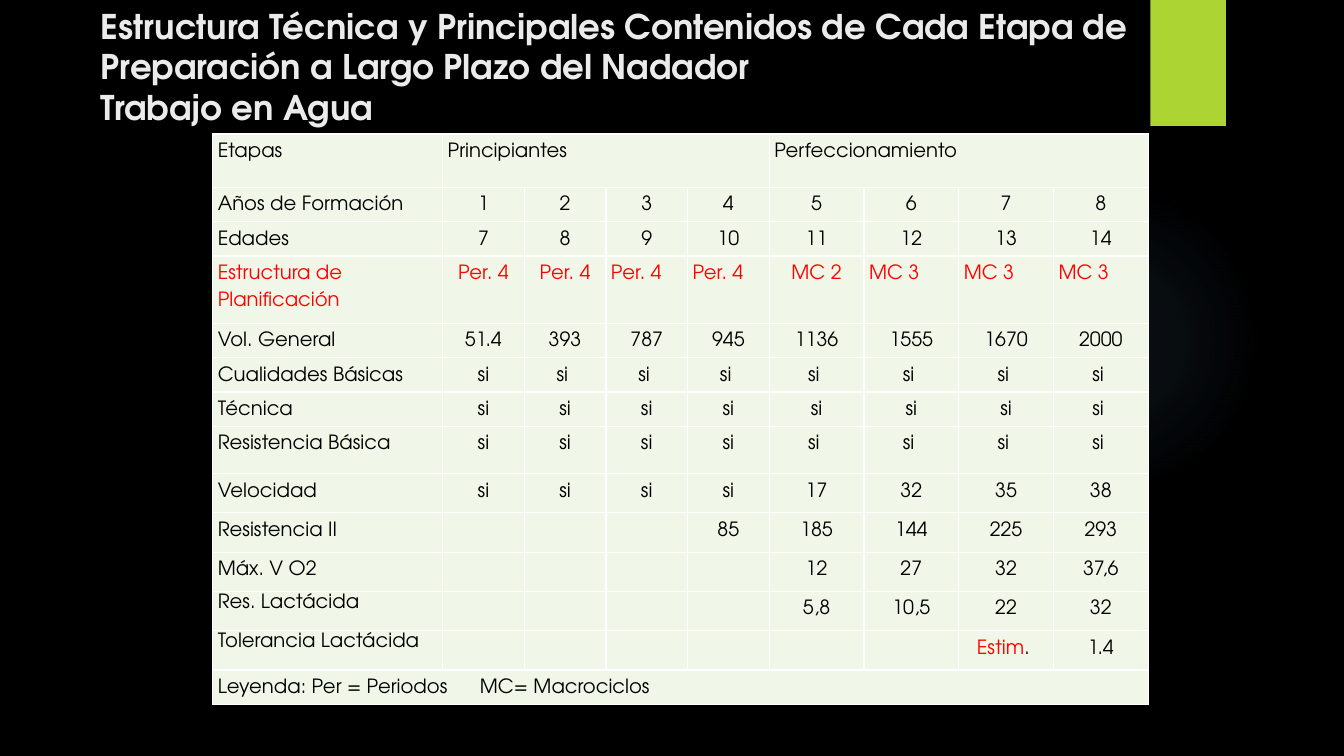
import pptx
import pptx.dml.color
import pptx.enum.shapes
import pptx.enum.text
import pptx.oxml
import pptx.oxml.ns
import pptx.util

Inches, Pt = pptx.util.Inches, pptx.util.Pt
RGBColor = pptx.dml.color.RGBColor
Align = pptx.enum.text.PP_ALIGN
Shape = pptx.enum.shapes.MSO_SHAPE

FONT = "TeX Gyre Adventor"
BLACK = RGBColor(0x00, 0x00, 0x00)
WHITE = RGBColor(0xFF, 0xFF, 0xFF)
RED = RGBColor(0xFF, 0x00, 0x00)
GREEN = RGBColor(0xAC, 0xD4, 0x33)
PALE = RGBColor(0xF1, 0xF7, 0xE8)
TITLE_GREY = RGBColor(0xEB, 0xEB, 0xEB)
GLOW = RGBColor(0x7A, 0xC4, 0xF0)
GLOW_STOPS = [(0, 7), (36, 6), (69, 0)]  # position and opacity, in percent

TITLE = ("Estructura Técnica y Principales Contenidos de Cada Etapa de "
         "Preparación a Largo Plazo del Nadador", "Trabajo en Agua")
STAGES = {0: "Etapas", 1: "Principiantes", 5: "Perfeccionamiento"}
LEGEND = "Leyenda: Per = Periodos\tMC= Macrociclos"
LEGEND_TAB = 2.6

# Height, label and values; the values end at the last column
ROWS = [
    (0.34, "Años de Formación", ["1", "2", "3", "4", "5", "6", "7", "8"]),
    (0.34, "Edades", ["7", "8", "9", "10", "11", "12", "13", "14"]),
    (0.67, "Estructura de Planificación", ["Per. 4"] * 4 + ["MC 2"] + ["MC 3"] * 3),
    (0.34, "Vol. General", ["51.4", "393", "787", "945", "1136", "1555", "1670", "2000"]),
    (0.34, "Cualidades Básicas", ["si"] + ["si "] * 7),
    (0.34, "Técnica", ["si"] * 7 + ["si "]),
    (0.47, "Resistencia Básica", ["si"] * 4 + ["si "] * 4),
    (0.39, "Velocidad", ["si"] * 4 + ["17", "32", "35", "38"]),
    (0.39, "Resistencia II", ["85", "185", "144", "225", "293"]),
    (0.39, "Máx. V O2", ["12", "27", "32", "37,6"]),
    (0.39, "Res. Lactácida", ["5,8", "10,5", "22", "32"]),
    (0.39, "Tolerancia Lactácida", ["Estim. ", "1.4"]),
]
STAGE_HEIGHT, LEGEND_HEIGHT = 0.53, 0.34
COLUMNS = [2.28] + [0.81] * 4 + [0.94] * 4
PLAN_ROW, PLAN_LEFT_COLUMNS = 3, (3, 4, 6, 7, 8)
TIGHT_LABELS = ("Res. Lactácida", "Tolerancia Lactácida")


def add_run(para, text, size, color, bold=False):
    span = para.add_run()
    span.text = text
    span.font.name, span.font.size, span.font.bold = FONT, Pt(size), bold
    span.font.color.rgb = color


def xml(tag, body, attributes=""):
    namespace = pptx.oxml.ns.nsdecls("a")
    return pptx.oxml.parse_xml(f"<a:{tag} {namespace} {attributes}>{body}</a:{tag}>")


def write_cell(cell, text, centred=False, color=BLACK, spacing=1.5):
    para = cell.text_frame.paragraphs[0]
    para.alignment = Align.CENTER if centred else Align.LEFT
    para.line_spacing = spacing
    if text.startswith("Estim"):
        add_run(para, text[:5], 14, RED)
        text = text[5:]
    add_run(para, text, 14, color)


def style_cell(cell):
    cell.margin_left = cell.margin_right = Inches(0.05)
    cell.margin_top = cell.margin_bottom = 0
    properties = cell._tc.get_or_add_tcPr()
    for side in "LRTB":
        line = f'<a:solidFill><a:srgbClr val="{WHITE}"/></a:solidFill>'
        properties.append(xml("ln" + side, line, f'w="{Pt(1)}"'))
    cell.fill.solid()
    cell.fill.fore_color.rgb = PALE


def add_decoration(page, kind, *place):
    shape = page.shapes.add_shape(kind, *map(Inches, place))
    shape.shadow.inherit = False
    shape.line.fill.background()
    return shape


deck = pptx.Presentation()
deck.slide_width, deck.slide_height = Inches(13.33), Inches(7.5)
page = deck.slides.add_slide(deck.slide_layouts[5])
page.background.fill.solid()
page.background.fill.fore_color.rgb = BLACK

glow = add_decoration(page, Shape.OVAL, 9.41, 1.83, 3.08, 3.08)
stops = "".join(
    f'<a:gs pos="{position * 1000}"><a:srgbClr val="{GLOW}">'
    f'<a:alpha val="{opacity * 1000}"/></a:srgbClr></a:gs>'
    for position, opacity in GLOW_STOPS)
gradient = xml("gradFill", f'<a:gsLst>{stops}</a:gsLst><a:path path="circle">'
               '<a:fillToRect l="50000" t="50000" r="50000" b="50000"/></a:path>')
glow._element.spPr.find(pptx.oxml.ns.qn("a:prstGeom")).addnext(gradient)

tab = add_decoration(page, Shape.RECTANGLE, 11.41, 0, 0.75, 1.25)
tab.fill.solid()
tab.fill.fore_color.rgb = GREEN

title = page.shapes.title
title.left, title.top, title.width, title.height = map(Inches, (0.9, 0, 11.5, 1.33))
title.text_frame.vertical_anchor = pptx.enum.text.MSO_ANCHOR.TOP
title.text_frame.auto_size = pptx.enum.text.MSO_AUTO_SIZE.NONE
heading = title.text_frame.paragraphs[0]
heading.alignment = Align.LEFT
add_run(heading, TITLE[0], 24.3, TITLE_GREY, True)
heading.add_line_break()
add_run(heading, TITLE[1], 24.3, TITLE_GREY, True)

heights = [STAGE_HEIGHT] + [row[0] for row in ROWS] + [LEGEND_HEIGHT]
last_row, last_column = len(heights) - 1, len(COLUMNS) - 1
table = page.shapes.add_table(
    len(heights), len(COLUMNS), Inches(2.11), Inches(1.33),
    Inches(sum(COLUMNS)), Inches(sum(heights))).table
table.first_row = table.horz_banding = False
for column, width in zip(table.columns, COLUMNS):
    column.width = Inches(width)
for row, height in zip(table.rows, heights):
    row.height = Inches(height)
for cell in table.iter_cells():
    style_cell(cell)

for start in (1, 5):
    table.cell(0, start).merge(table.cell(0, start + 3))
table.cell(last_row, 0).merge(table.cell(last_row, last_column))
for column, stage in STAGES.items():
    write_cell(table.cell(0, column), stage)

for index, (height, label, values) in enumerate(ROWS, 1):
    color = RED if index == PLAN_ROW else BLACK
    write_cell(table.cell(index, 0), label, color=color,
               spacing=1.15 if label in TIGHT_LABELS else 1.5)
    for column, value in enumerate(values, len(COLUMNS) - len(values)):
        centred = index != PLAN_ROW or column not in PLAN_LEFT_COLUMNS
        write_cell(table.cell(index, column), value, centred, color)

legend = table.cell(last_row, 0)
write_cell(legend, LEGEND)
legend.text_frame.paragraphs[0]._p.get_or_add_pPr().append(
    xml("tabLst", f'<a:tab pos="{Inches(LEGEND_TAB)}" algn="l"/>'))

deck.save("out.pptx")
